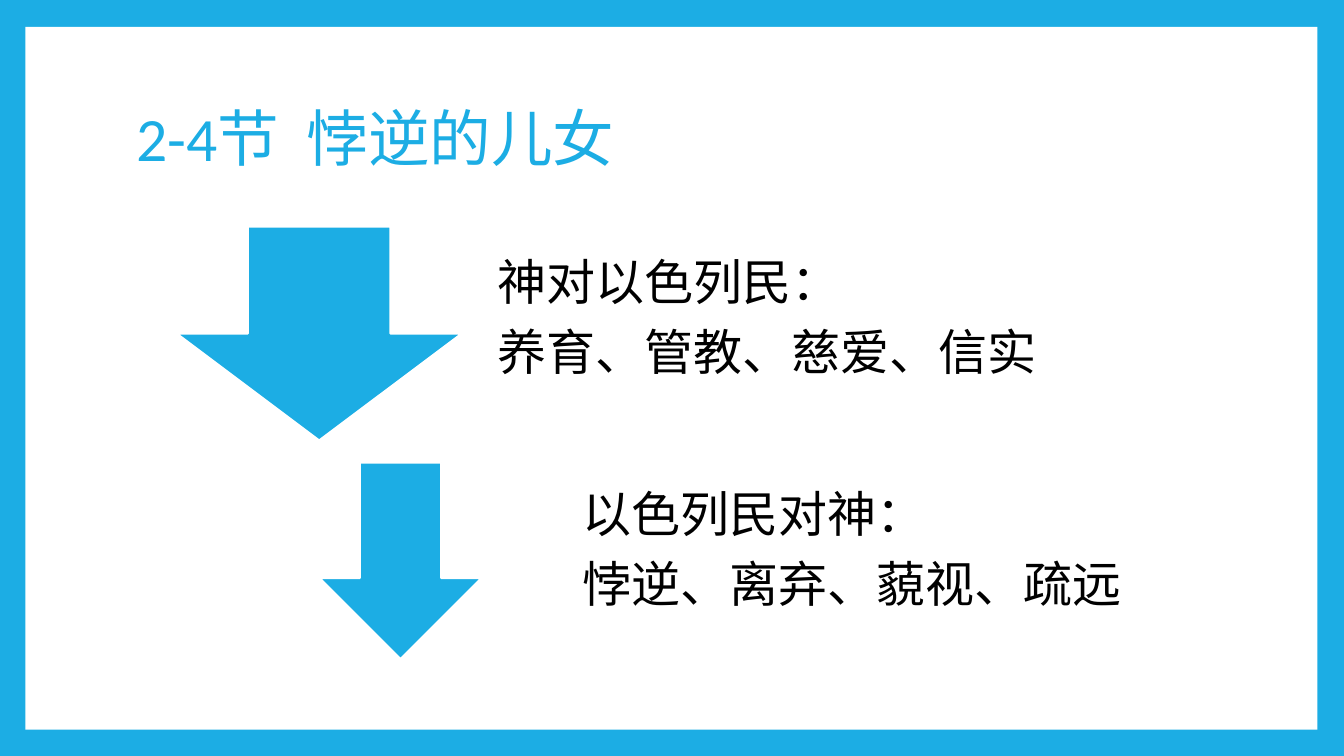
from dataclasses import dataclass

from pptx import Presentation
from pptx.dml.color import RGBColor
from pptx.enum.shapes import MSO_SHAPE as Shape
from pptx.enum.text import MSO_ANCHOR as Anchor
from pptx.util import Cm, Pt


@dataclass(frozen=True)
class Theme:
    blue: RGBColor = RGBColor(0x1C, 0xAD, 0xE4)
    white: RGBColor = RGBColor(0xFF, 0xFF, 0xFF)
    black: RGBColor = RGBColor(0, 0, 0)
    font: str = "Calibri"
    title_size: Pt = Pt(44)
    body_size: Pt = Pt(35)
    body_gap: Pt = Pt(12.25)


theme = Theme()


def add_filled_shape(kind, box, color):
    shape = slide.shapes.add_shape(kind, *map(Cm, box))
    shape.shadow.inherit = False
    shape.fill.solid()
    shape.fill.fore_color.rgb = color
    shape.line.fill.background()
    return shape


def add_text(box, lines, size, color, gap=Pt(0)):
    """Add a vertically centred text box, one paragraph per line."""
    frame = slide.shapes.add_textbox(*map(Cm, box)).text_frame
    frame.word_wrap = True
    frame.vertical_anchor = Anchor.MIDDLE
    for index, line in enumerate(lines):
        paragraph = frame.add_paragraph() if index else frame.paragraphs[0]
        paragraph.line_spacing = 0.9
        paragraph.space_after = gap
        run = paragraph.add_run()
        run.text = line
        run.font.name = theme.font
        run.font.size = size
        run.font.color.rgb = color
    return frame


presentation = Presentation()
presentation.slide_width = Cm(33.87)
presentation.slide_height = Cm(19.05)
slide = presentation.slides.add_slide(presentation.slide_layouts[6])

# Blue background with a white panel
slide.background.fill.solid()
slide.background.fill.fore_color.rgb = theme.blue
add_filled_shape(Shape.RECTANGLE, (0.64, 0.68, 32.56, 17.71), theme.white)

add_text((3.18, 1.7, 27.43, 3.76), ["2-4节  悖逆的儿女"], theme.title_size, theme.blue)

# Each arrow with the statement beside it
statements = [
    ((4.45, 5.71, 7.19, 5.39), (11.84, 5.71), ["神对以色列民：", "养育、管教、慈爱、信实"]),
    ((8.05, 11.66, 4.09, 4.95), (14, 11.56), ["以色列民对神：", "悖逆、离弃、藐视、疏远"]),
]
for arrow_box, text_corner, lines in statements:
    arrow = add_filled_shape(Shape.DOWN_ARROW, arrow_box, theme.blue)
    arrow.line.color.rgb = theme.white
    arrow.line.width = Pt(1.5)
    frame = add_text((*text_corner, 15.37, 5.39), lines, theme.body_size, theme.black, theme.body_gap)
    frame.margin_left = frame.margin_right = frame.margin_bottom = Cm(0.69)
    frame.margin_top = 0

presentation.save("out.pptx")
